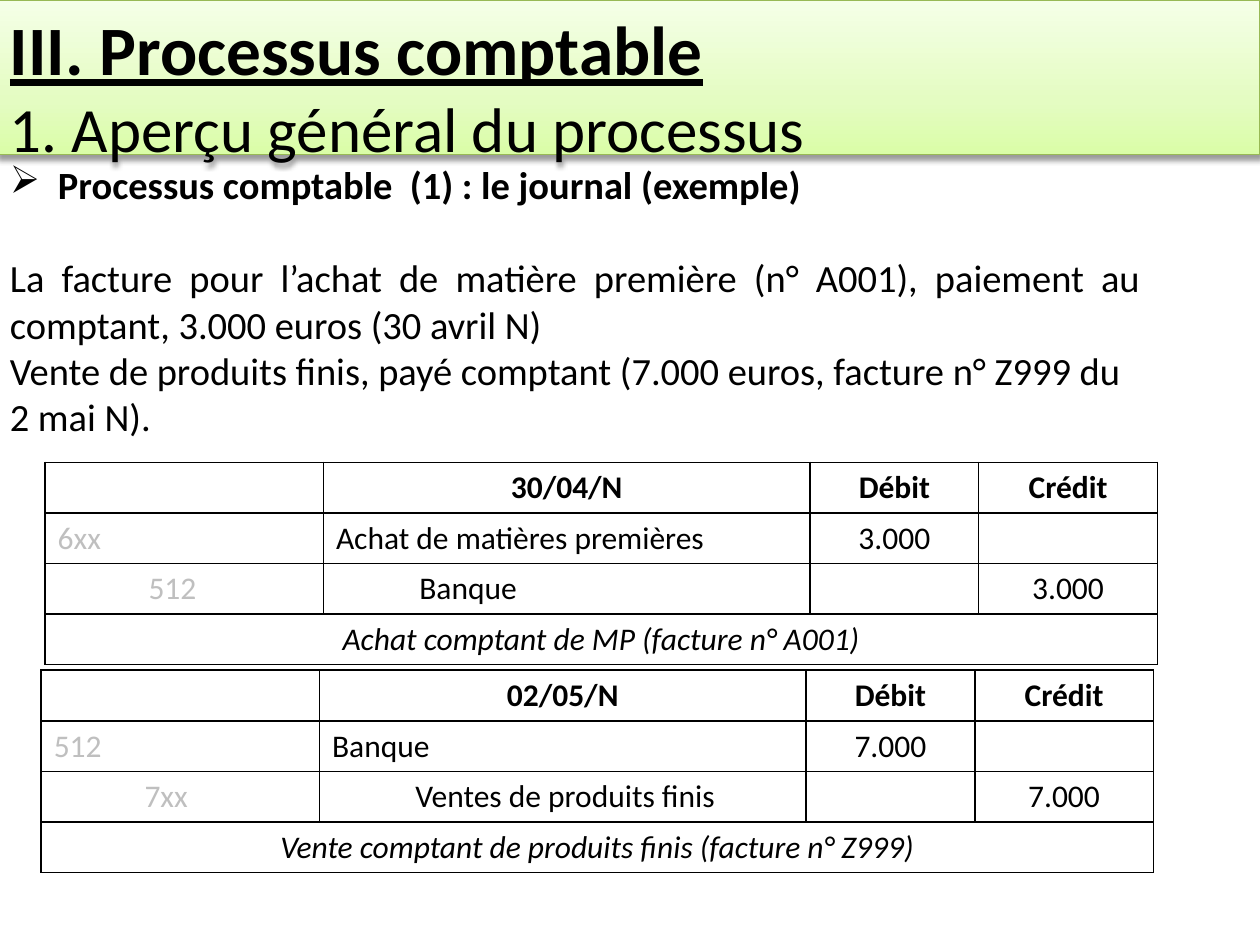
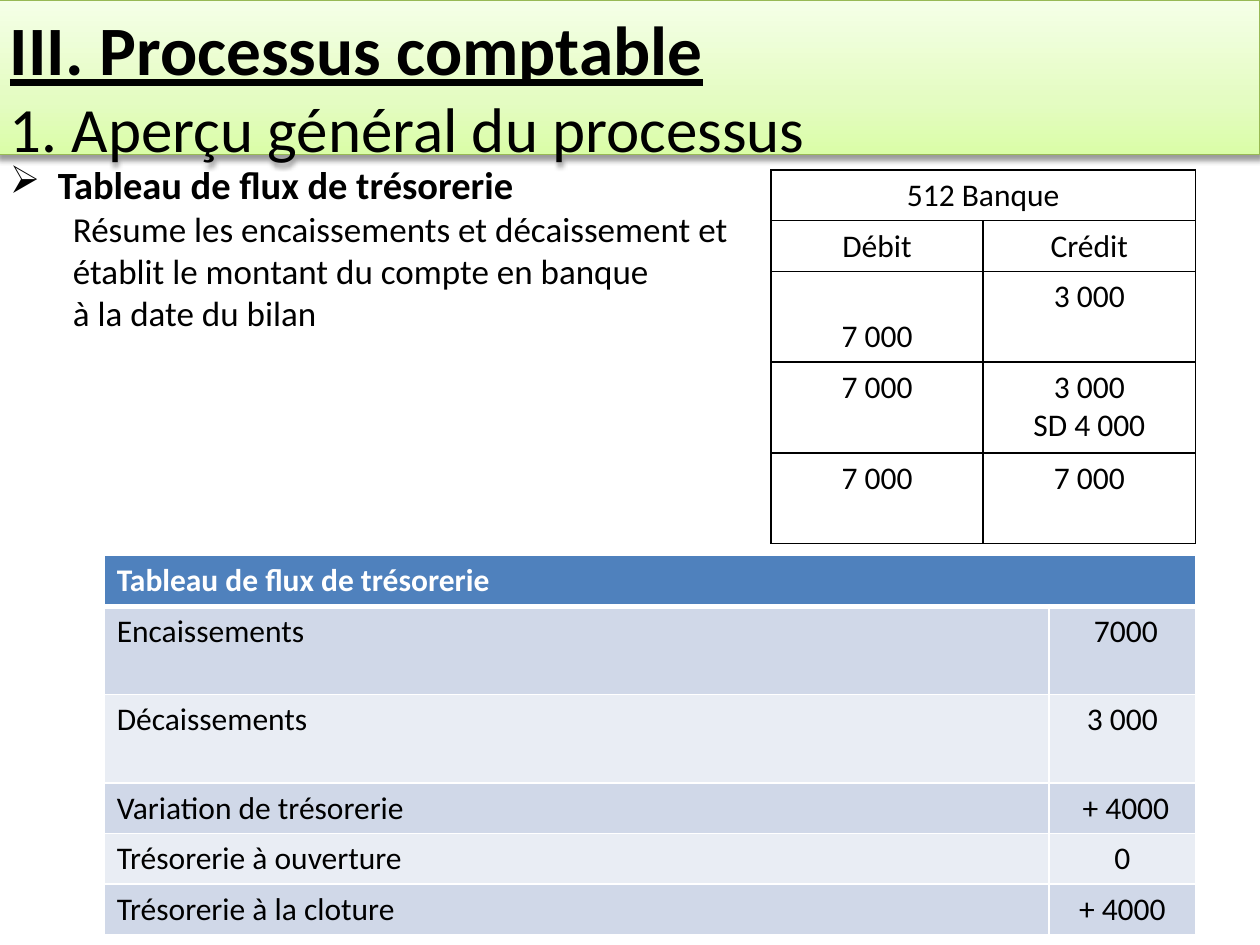
import pptx
import pptx.dml.color
import pptx.enum.shapes
import pptx.enum.text
import pptx.oxml
import pptx.oxml.ns
import pptx.util
from pptx.util import Cm

RGBColor = pptx.dml.color.RGBColor
ALIGN = pptx.enum.text.PP_ALIGN
ANCHOR = pptx.enum.text.MSO_ANCHOR

BLACK = RGBColor(0x00, 0x00, 0x00)
WHITE = RGBColor(0xFF, 0xFF, 0xFF)
ACCOUNT_GREY = RGBColor(0xBF, 0xBF, 0xBF)
BAND_LINE = RGBColor(0x98, 0xB9, 0x55)
BAND_STOPS = [
    (0, RGBColor(0xDA, 0xFD, 0xA7)),
    (35, RGBColor(0xE4, 0xFC, 0xC2)),
    (100, RGBColor(0xF5, 0xFF, 0xE7)),
]
HEADER_BLUE = RGBColor(0x4F, 0x81, 0xBD)
ROW_BLUES = [RGBColor(0xD0, 0xD8, 0xE8), RGBColor(0xE9, 0xED, 0xF4)]

FONT = "Calibri"
TABLE_SIZE = 18
BODY_SIZE = 22
DETAIL_SIZE = 20
BULLET_INDENT = Cm(0.97)
DETAIL_INDENT = Cm(1.27)
LEFT_EDGE = Cm(-0.05)
BAND_HEIGHT = Cm(3.12)
LINE_ROW = 1.02

TITLE = "III. Processus comptable"
SUBTITLE = "1. Aperçu général du processus"

JOURNAL_HEADING = "Processus comptable  (1) : le journal (exemple)"
JOURNAL_OPERATIONS = [
    ("La facture pour l’achat de matière première (n° A001), paiement au comptant, "
     "3.000 euros (30 avril N)", ALIGN.JUSTIFY, 27),
    ("Vente de produits finis, payé comptant (7.000 euros, facture n° Z999 du 2 mai N).",
     ALIGN.LEFT, 0),
]
JOURNAL_COLUMNS = [1.83, 3.78, 1.68, 8.13, 3.4, 3.6]
JOURNAL_ENTRIES = [
    {
        "position": (0.91, 9.32),
        "date": "30/04/N",
        "debit": ("6xx", "Achat de matières premières"),
        "credit": ("512", "Banque"),
        "amount": "3.000",
        "label": "Achat comptant de MP (facture n° A001)",
    },
    {
        "position": (0.83, 13.51),
        "date": "02/05/N",
        "debit": ("512", "Banque"),
        "credit": ("7xx", "Ventes de produits finis"),
        "amount": "7.000",
        "label": "Vente comptant de produits finis (facture n° Z999)",
    },
]

CASH_HEADING = "Tableau de flux de trésorerie"
CASH_DETAILS = [
    "Résume les encaissements et décaissement et",
    "établit le montant du compte en banque",
    "à la date du bilan",
]
BANK_TITLE = "512 Banque"
BANK_ROWS = [
    ("Débit", "Crédit", LINE_ROW),
    ("7 000", "3 000", 1.83),
    ("7 000", "3 000\nSD 4 000", 1.83),
    ("7 000", "7 000", 1.83),
]
CASH_FLOWS = [
    ("Encaissements", " 7000", 1.78),
    ("Décaissements", "3 000", 1.78),
    ("Variation de trésorerie", " + 4000", LINE_ROW),
    ("Trésorerie à ouverture", "0", LINE_ROW),
    ("Trésorerie à la cloture", "+ 4000", LINE_ROW),
]


def add_xml(parent, xml, index=None):
    namespaces = pptx.oxml.ns.nsdecls("a")
    element = pptx.oxml.parse_xml(xml.replace(" ", f" {namespaces} ", 1))
    if index is None:
        parent.append(element)
    else:
        parent.insert(index, element)


def format_runs(paragraph, size, color=BLACK, bold=False, italic=False, underline=False):
    for run in paragraph.runs:
        run.font.name = FONT
        run.font.size = pptx.util.Pt(size)
        run.font.color.rgb = color
        run.font.bold = bold
        run.font.italic = italic
        run.font.underline = underline


def add_band(slide, width):
    band = slide.shapes.add_shape(
        pptx.enum.shapes.MSO_SHAPE.RECTANGLE, LEFT_EDGE, 0, width - LEFT_EDGE, BAND_HEIGHT)
    band.line.color.rgb = BAND_LINE
    band.line.width = pptx.util.Pt(0.75)
    band.shadow.inherit = False
    properties = band._element.spPr
    stops = "".join(
        f'<a:gs pos="{position * 1000}"><a:srgbClr val="{color}"/></a:gs>'
        for position, color in BAND_STOPS)
    add_xml(properties,
            f'<a:gradFill rotWithShape="1"><a:gsLst>{stops}</a:gsLst>'
            '<a:lin ang="16200000" scaled="0"/></a:gradFill>', 2)
    add_xml(properties.find(pptx.oxml.ns.qn("a:effectLst")),
            '<a:outerShdw blurRad="39400" dist="20300" dir="5400000" rotWithShape="0">'
            '<a:srgbClr val="000000"><a:alpha val="38000"/></a:srgbClr></a:outerShdw>')

    frame = band.text_frame
    frame.word_wrap = True
    frame.vertical_anchor = ANCHOR.TOP
    frame.text = f"{TITLE}\n{SUBTITLE}"
    title, subtitle = frame.paragraphs
    format_runs(title, 39.6, bold=True, underline=True)
    format_runs(subtitle, 36)
    for paragraph in frame.paragraphs:
        paragraph.alignment = ALIGN.LEFT


def add_body(slide, heading, height):
    box = slide.shapes.add_textbox(LEFT_EDGE, BAND_HEIGHT, Cm(23.29), Cm(height))
    frame = box.text_frame
    frame.word_wrap = True
    frame.text = heading
    paragraph = frame.paragraphs[0]
    format_runs(paragraph, BODY_SIZE, bold=True)
    properties = paragraph._p.get_or_add_pPr()
    properties.set("marL", str(BULLET_INDENT))
    properties.set("indent", str(-BULLET_INDENT))
    add_xml(properties, '<a:buChar char="➢"/>')
    return frame


def set_borders(cell, color, left=1, right=1, top=1, bottom=1):
    properties = cell._tc.get_or_add_tcPr()
    for index, (side, width) in enumerate(
            [("L", left), ("R", right), ("T", top), ("B", bottom)]):
        fill = f'<a:solidFill><a:srgbClr val="{color}"/></a:solidFill>' if width else "<a:noFill/>"
        add_xml(properties, f'<a:ln{side} w="{width * 12700}">{fill}</a:ln{side}>', index)


def add_grid(slide, position, columns, rows):
    left, top = position
    table = slide.shapes.add_table(
        len(rows), len(columns), Cm(left), Cm(top), Cm(sum(columns)), Cm(sum(rows))).table
    table.first_row = False
    table.horz_banding = False
    for column, width in zip(table.columns, columns):
        column.width = Cm(width)
    for row, height in zip(table.rows, rows):
        row.height = Cm(height)
    for cell in table.iter_cells():
        cell.fill.background()
    return table


def write_cell(cell, text, alignment=ALIGN.CENTER, **style):
    cell.text_frame.text = text
    for paragraph in cell.text_frame.paragraphs:
        paragraph.alignment = alignment
        format_runs(paragraph, TABLE_SIZE, **style)


def add_journal_entry(slide, entry):
    table = add_grid(slide, entry["position"], JOURNAL_COLUMNS, [LINE_ROW] * 4)
    for row in range(4):
        for column in range(6):
            opens_indent = row == 2 and column in (0, 2)
            closes_indent = row == 2 and column in (1, 3)
            set_borders(table.cell(row, column), BLACK,
                        left=0 if closes_indent else 1, right=0 if opens_indent else 1)
    for row in (0, 1):
        for column in (0, 2):
            table.cell(row, column).merge(table.cell(row, column + 1))
    table.cell(3, 0).merge(table.cell(3, 5))

    for column, text in [(2, entry["date"]), (4, "Débit"), (5, "Crédit")]:
        write_cell(table.cell(0, column), text, bold=True)
    for row, first_column, side, amount_column in [(1, 0, "debit", 4), (2, 1, "credit", 5)]:
        account, name = entry[side]
        write_cell(table.cell(row, first_column), account, ALIGN.LEFT, color=ACCOUNT_GREY)
        write_cell(table.cell(row, first_column + 2), name, ALIGN.LEFT)
        write_cell(table.cell(row, amount_column), entry["amount"])
    write_cell(table.cell(3, 0), entry["label"], italic=True)


def add_cash_flow_table(slide):
    heights = [LINE_ROW] + [height for *texts, height in CASH_FLOWS]
    table = add_grid(slide, (2.1, 11.2), [19.05, 2.95], heights)
    for column in (0, 1):
        set_borders(table.cell(0, column), WHITE, bottom=3)
        table.cell(0, column).fill.solid()
        table.cell(0, column).fill.fore_color.rgb = HEADER_BLUE
    table.cell(0, 0).merge(table.cell(0, 1))
    write_cell(table.cell(0, 0), CASH_HEADING, ALIGN.LEFT, color=WHITE, bold=True)
    for row, (label, amount, height) in enumerate(CASH_FLOWS, 1):
        for column, text in enumerate((label, amount)):
            cell = table.cell(row, column)
            set_borders(cell, WHITE, top=3 if row == 1 else 1)
            cell.fill.solid()
            cell.fill.fore_color.rgb = ROW_BLUES[(row - 1) % 2]
            write_cell(cell, text, ALIGN.CENTER if column else ALIGN.LEFT)


def add_bank_account(slide):
    heights = [LINE_ROW] + [height for *texts, height in BANK_ROWS]
    table = add_grid(slide, (15.54, 3.43), [4.28, 4.28], heights)
    for cell in table.iter_cells():
        set_borders(cell, BLACK)
    table.cell(0, 0).merge(table.cell(0, 1))
    table.cell(0, 0).vertical_anchor = ANCHOR.MIDDLE
    write_cell(table.cell(0, 0), BANK_TITLE)
    for row, (debit, credit, height) in enumerate(BANK_ROWS, 1):
        write_cell(table.cell(row, 0), debit)
        write_cell(table.cell(row, 1), credit)
    table.cell(2, 0).vertical_anchor = ANCHOR.BOTTOM


def build_journal_slide(slide):
    frame = add_body(slide, JOURNAL_HEADING, 8.56)
    for text, alignment, space in JOURNAL_OPERATIONS:
        paragraph = frame.add_paragraph()
        paragraph.text = text
        paragraph.alignment = alignment
        paragraph.space_before = pptx.util.Pt(space)
        format_runs(paragraph, BODY_SIZE)
    for entry in JOURNAL_ENTRIES:
        add_journal_entry(slide, entry)


def build_cash_slide(slide):
    frame = add_body(slide, CASH_HEADING, 6.4)
    for text in CASH_DETAILS:
        paragraph = frame.add_paragraph()
        paragraph.text = text
        paragraph.level = 1
        paragraph._p.get_or_add_pPr().set("marL", str(DETAIL_INDENT))
        format_runs(paragraph, DETAIL_SIZE)
    add_cash_flow_table(slide)
    add_bank_account(slide)


def main():
    presentation = pptx.Presentation()
    presentation.slide_width = Cm(25.4)
    presentation.slide_height = Cm(19.05)
    for build in (build_journal_slide, build_cash_slide):
        slide = presentation.slides.add_slide(presentation.slide_layouts[6])
        add_band(slide, presentation.slide_width)
        build(slide)
    presentation.save("out.pptx")


if __name__ == "__main__":
    main()
